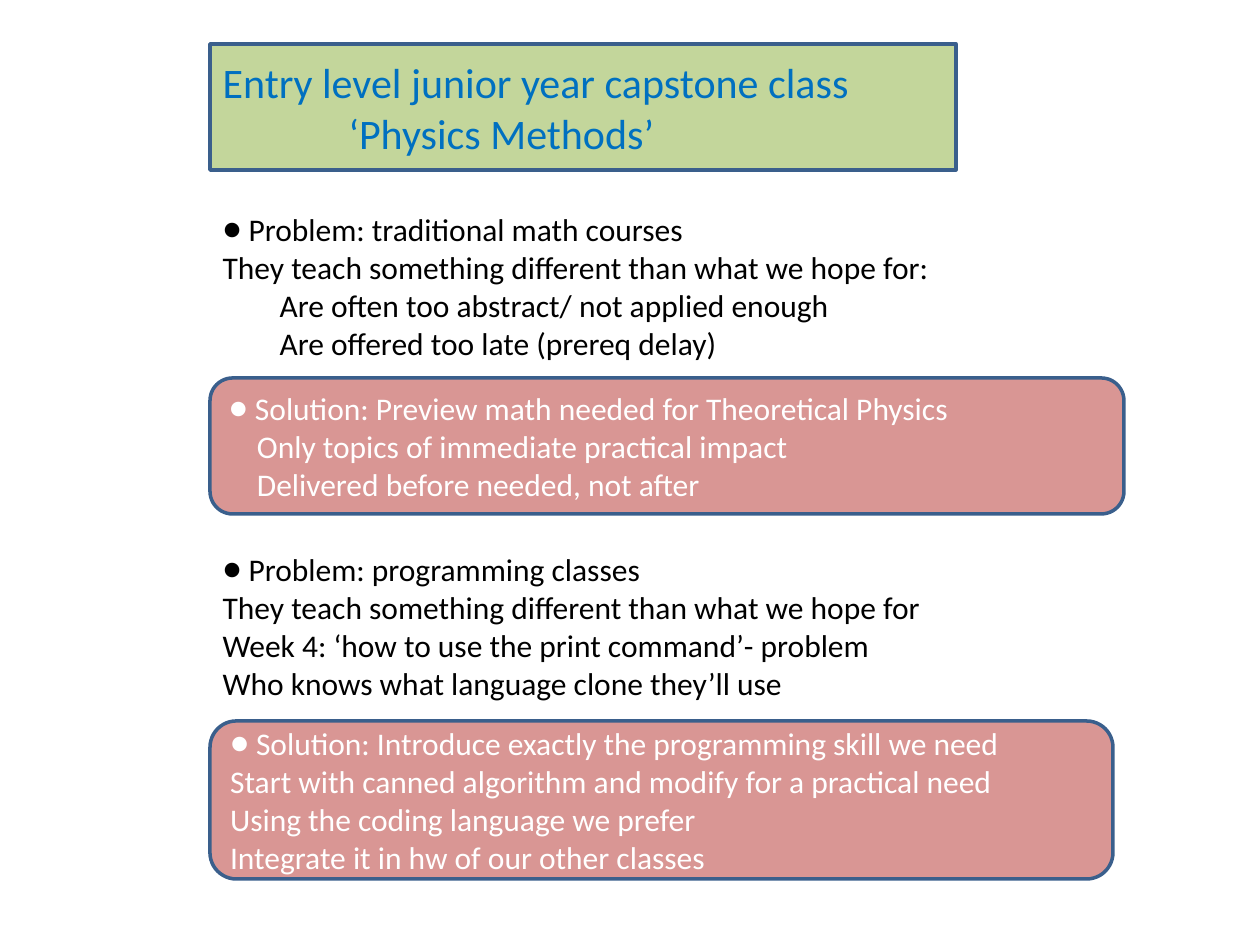
from dataclasses import dataclass

import lxml.etree
import pptx
import pptx.dml.color
import pptx.enum.shapes
import pptx.enum.text
import pptx.oxml.ns
import pptx.util

PX_PER_INCH = 126
LEFT = 210
FONT = "Calibri"
COLORS = {
    "title_fill": "C3D69B",
    "title_text": "0070C0",
    "solution_fill": "D99694",
    "solution_text": "FFFFFF",
    "problem_text": "000000",
    "outline": "3A5F8C",
}


@dataclass
class Line:
    text: str
    indent: int = 0
    bullet: bool = False


@dataclass
class Block:
    top: int
    width: int
    height: int
    lines: list[Line]


TITLE = Block(44, 746, 126, [
    Line("Entry level junior year capstone class"),
    Line("‘Physics Methods’", 126),
])
PROBLEMS = [
    Block(204, 741, 164, [
        Line("Problem: traditional math courses", 26, True),
        Line("They teach something different than what we hope for:"),
        Line("Are often too abstract/ not applied enough", 57),
        Line("Are offered too late (prereq delay)", 57),
    ]),
    Block(544, 741, 164, [
        Line("Problem: programming classes", 26, True),
        Line("They teach something different than what we hope for"),
        Line("Week 4: ‘how to use the print command’- problem"),
        Line("Who knows what language clone they’ll use"),
    ]),
]
SOLUTIONS = [
    Block(378, 914, 136, [
        Line("Solution: Preview math needed for Theoretical Physics", 26, True),
        Line("Only topics of immediate practical impact", 28),
        Line("Delivered before needed, not after", 28),
    ]),
    Block(721, 903, 158, [
        Line("Solution: Introduce exactly the programming skill we need", 26, True),
        Line("Start with canned algorithm and modify for a practical need"),
        Line("Using the coding language we prefer"),
        Line("Integrate it in hw of our other classes"),
    ]),
]


def px(n: int) -> int:
    return pptx.util.Inches(n / PX_PER_INCH)


def rgb(name: str) -> pptx.dml.color.RGBColor:
    return pptx.dml.color.RGBColor.from_string(COLORS[name])


def add_child(parent, tag: str, **attrs: str):
    return lxml.etree.SubElement(parent, pptx.oxml.ns.qn(tag), attrs)


def place(s, block: Block) -> None:
    s.left, s.top = px(LEFT), px(block.top)
    s.width, s.height = px(block.width), px(block.height)


def style_card(s, fill: str) -> None:
    s.fill.solid()
    s.fill.fore_color.rgb = rgb(fill)
    s.line.color.rgb = rgb("outline")
    s.line.width = pptx.util.Pt(2)


def write(s, block: Block, size: int, color: str, anchor) -> None:
    tf = s.text_frame
    tf.text = "\n".join(line.text for line in block.lines)
    tf.word_wrap = True
    tf.auto_size = pptx.enum.text.MSO_AUTO_SIZE.NONE
    tf.vertical_anchor = anchor
    for p, line in zip(tf.paragraphs, block.lines):
        p.alignment = pptx.enum.text.PP_ALIGN.LEFT
        p.line_spacing = 1.0
        p.space_before = pptx.util.Pt(0)
        # Indents and bullets
        props = p._p.get_or_add_pPr()
        props.set("marL", str(px(line.indent)))
        props.set("indent", str(-px(line.indent) if line.bullet else 0))
        if line.bullet:
            add_child(props, "a:buFont", typeface=FONT)
            add_child(props, "a:buChar", char="●")
        else:
            add_child(props, "a:buNone")
        for r in p.runs:
            r.font.name = FONT
            r.font.size = pptx.util.Pt(size)
            r.font.color.rgb = rgb(color)


def main() -> None:
    prs = pptx.Presentation()
    prs.slide_width, prs.slide_height = px(1260), px(945)
    slide = prs.slides.add_slide(prs.slide_layouts.get_by_name("Two Content"))
    middle = pptx.enum.text.MSO_ANCHOR.MIDDLE
    top = pptx.enum.text.MSO_ANCHOR.TOP
    title, *bodies = slide.placeholders

    # Title, as a rounded card
    place(title, TITLE)
    geometry = add_child(title.element.spPr, "a:prstGeom", prst="roundRect")
    add_child(geometry, "a:avLst")
    style_card(title, "title_fill")
    write(title, TITLE, 24, "title_text", middle)

    # Problems
    for body, block in zip(bodies, PROBLEMS):
        place(body, block)
        write(body, block, 18, "problem_text", top)

    # Solutions
    for block in SOLUTIONS:
        card = slide.shapes.add_shape(
            pptx.enum.shapes.MSO_SHAPE.ROUNDED_RECTANGLE,
            px(LEFT), px(block.top), px(block.width), px(block.height))
        card.shadow.inherit = False
        style_card(card, "solution_fill")
        write(card, block, 18, "solution_text", middle)

    prs.save("out.pptx")


if __name__ == "__main__":
    main()
